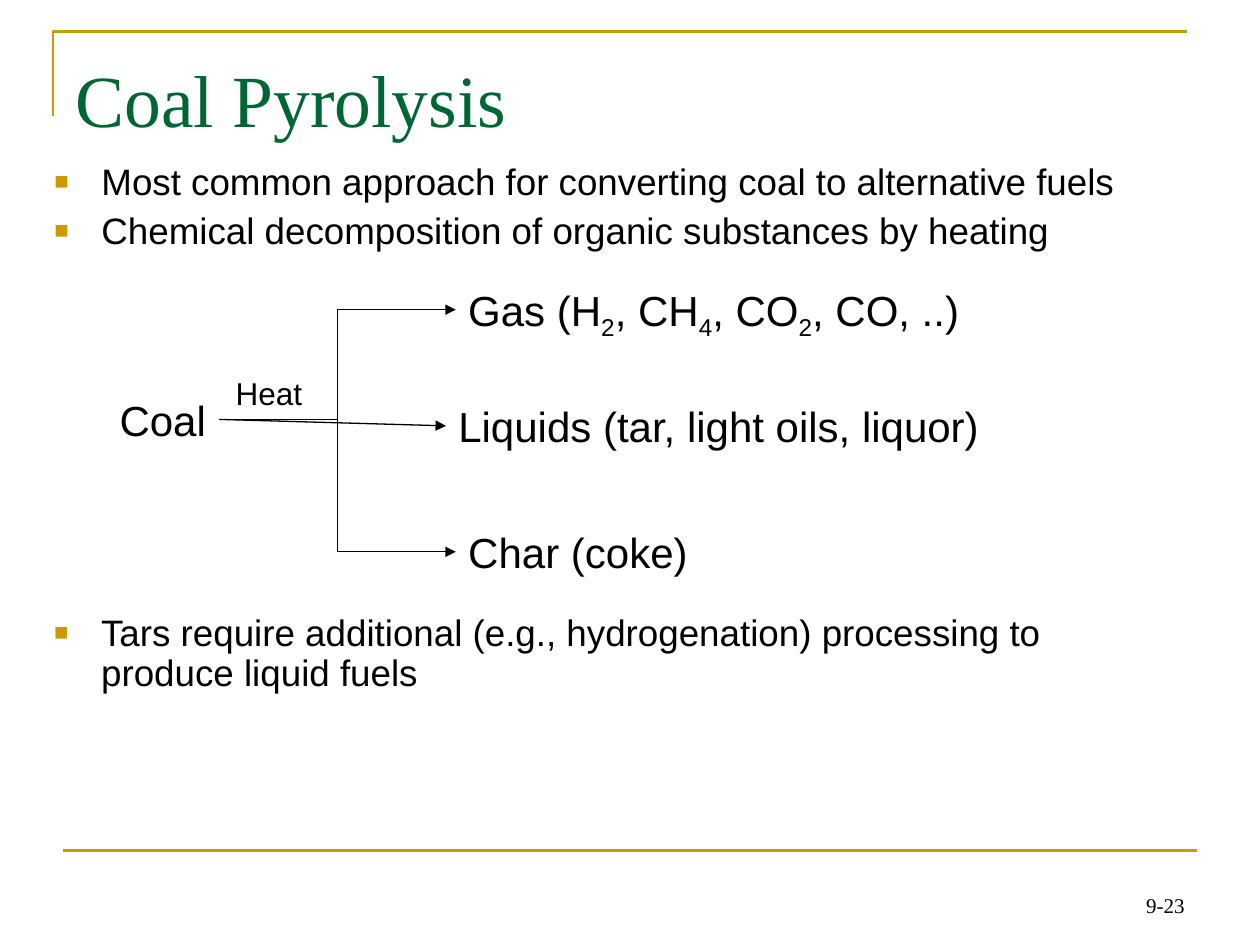
from dataclasses import dataclass

from lxml import etree
from pptx import Presentation
from pptx import util as u
from pptx.dml.color import RGBColor
from pptx.enum import shapes, text
from pptx.oxml import ns


@dataclass(frozen=True)
class Theme:
    gold: RGBColor = RGBColor(0xCC, 0x99, 0x00)
    green: RGBColor = RGBColor(0x00, 0x66, 0x33)
    black: RGBColor = RGBColor(0, 0, 0)
    serif: str = "Times New Roman"
    sans: str = "Arial"
    title_size: int = 42
    label_size: int = 24
    body_size: int = 21
    note_size: int = 18
    number_size: int = 12
    rule_width: float = 1.5
    arrow_width: float = 0.75


def add_xml(parent, tag, **attributes):
    return etree.SubElement(parent, ns.qn(tag), attributes)


def place(shape, left, top, width, height):
    shape.left, shape.top = u.Cm(left), u.Cm(top)
    shape.width, shape.height = u.Cm(width), u.Cm(height)


class SlideBuilder:
    def __init__(self, slide, theme):
        self.slide = slide
        self.theme = theme

    def set_font(self, paragraph, size, name=None, color=None):
        paragraph.font.size = u.Pt(size)
        paragraph.font.name = name or self.theme.sans
        paragraph.font.color.rgb = color or self.theme.black

    def title(self, wording, *box):
        shape = self.slide.shapes.title
        place(shape, *box)
        frame = shape.text_frame
        frame.text = wording
        frame.auto_size = text.MSO_AUTO_SIZE.NONE
        frame.vertical_anchor = text.MSO_ANCHOR.TOP
        frame.margin_top = u.Cm(0.33)
        paragraph = frame.paragraphs[0]
        paragraph.alignment = text.PP_ALIGN.LEFT
        self.set_font(paragraph, self.theme.title_size, self.theme.serif, self.theme.green)

    def bullets(self, shape, lines, *box):
        place(shape, *box)
        frame = shape.text_frame
        frame.word_wrap = True
        frame.auto_size = text.MSO_AUTO_SIZE.NONE
        frame.text = "\n".join(lines)
        for paragraph in frame.paragraphs:
            properties = paragraph._p.get_or_add_pPr()
            properties.set("marL", str(u.Cm(0.95)))
            properties.set("indent", str(-u.Cm(0.95)))
            color = add_xml(properties, "a:buClr")
            add_xml(color, "a:srgbClr", val=str(self.theme.gold))
            add_xml(properties, "a:buSzPct", val="65000")
            add_xml(properties, "a:buFont", typeface=self.theme.sans)
            add_xml(properties, "a:buChar", char="■")
            paragraph.line_spacing = 0.9
            paragraph.space_before = u.Pt(5)
            self.set_font(paragraph, self.theme.body_size)

    def text_box(self):
        return self.slide.shapes.add_textbox(0, 0, 0, 0)

    def label(self, parts, left, top, width, height=1.27, size=None):
        """Write one line; every second part is a subscript."""
        shape = self.text_box()
        place(shape, left, top, width, height)
        frame = shape.text_frame
        frame.word_wrap = False
        frame.auto_size = text.MSO_AUTO_SIZE.SHAPE_TO_FIT_TEXT
        paragraph = frame.paragraphs[0]
        self.set_font(paragraph, size or self.theme.label_size)
        for index, part in enumerate(parts):
            run = paragraph.add_run()
            run.text = part
            if index % 2:
                run._r.get_or_add_rPr().set("baseline", "-25000")
        return shape

    def page_number(self, wording, *box):
        shape = self.text_box()
        place(shape, *box)
        frame = shape.text_frame
        frame.word_wrap = True
        frame.vertical_anchor = text.MSO_ANCHOR.BOTTOM
        frame.text = wording
        paragraph = frame.paragraphs[0]
        paragraph.alignment = text.PP_ALIGN.RIGHT
        self.set_font(paragraph, self.theme.number_size, self.theme.serif)

    def connector(self, kind, color, width, points=(0, 0, 0, 0)):
        line = self.slide.shapes.add_connector(kind, *map(u.Cm, points))
        line.line.color.rgb = color
        line.line.width = u.Pt(width)
        add_xml(line._element.spPr, "a:effectLst")
        return line

    def rule(self, *points):
        self.connector(shapes.MSO_CONNECTOR.STRAIGHT, self.theme.gold,
                       self.theme.rule_width, points)

    def arrow(self, kind, source, target):
        """Join the right side of source to the left side of target."""
        line = self.connector(kind, self.theme.black, self.theme.arrow_width)
        line.begin_connect(source, 3)
        line.end_connect(target, 1)
        add_xml(line.line._get_or_add_ln(), "a:tailEnd", type="triangle")

    def corner_frame(self, left, top, right, bottom):
        builder = self.slide.shapes.build_freeform(u.Cm(left), u.Cm(bottom))
        builder.add_line_segments(
            [(u.Cm(left), u.Cm(top)), (u.Cm(right), u.Cm(top))], close=False)
        shape = builder.convert_to_shape()
        shape.shadow.inherit = False
        shape.fill.background()
        shape.line.color.rgb = self.theme.gold
        shape.line.width = u.Pt(self.theme.rule_width)


def main():
    presentation = Presentation()
    presentation.slide_width, presentation.slide_height = u.Cm(25.4), u.Cm(19.05)
    slide = presentation.slides.add_slide(presentation.slide_layouts[1])
    theme = Theme()
    builder = SlideBuilder(slide, theme)

    builder.corner_frame(1.07, 0.64, 23.93, 2.34)
    builder.rule(1.27, 17.15, 24.13, 17.15)
    builder.page_number("9-23", 18.21, 17.35, 5.92, 1.27)
    builder.title("Coal Pyrolysis", 1.27, 0.76, 22.86, 3.18)
    builder.bullets(slide.placeholders[1], [
        "Most common approach for converting coal to alternative fuels",
        "Chemical decomposition of organic substances by heating",
    ], 0.84, 3.18, 22.86, 2.11)

    coal = builder.label(["Coal"], 2.16, 7.82, 2.26)
    gas = builder.label(["Gas (H", "2", ", CH", "4", ", CO", "2", ", CO, ..)"],
                        9.19, 5.61, 10.52)
    liquids = builder.label(["Liquids (tar, light oils, liquor)"], 8.99, 7.95, 11.07)
    char = builder.label(["Char (coke)"], 9.19, 10.49, 4.93)
    builder.arrow(shapes.MSO_CONNECTOR.STRAIGHT, coal, liquids)
    for product in (gas, char):
        builder.arrow(shapes.MSO_CONNECTOR.ELBOW, coal, product)
    builder.label(["Heat"], 4.5, 7.42, 1.85, 1.02, theme.note_size)

    builder.bullets(builder.text_box(), [
        "Tars require additional (e.g., hydrogenation) processing to produce liquid fuels",
    ], 0.84, 12.27, 22.86, 2.11)
    presentation.save("out.pptx")


if __name__ == "__main__":
    main()
